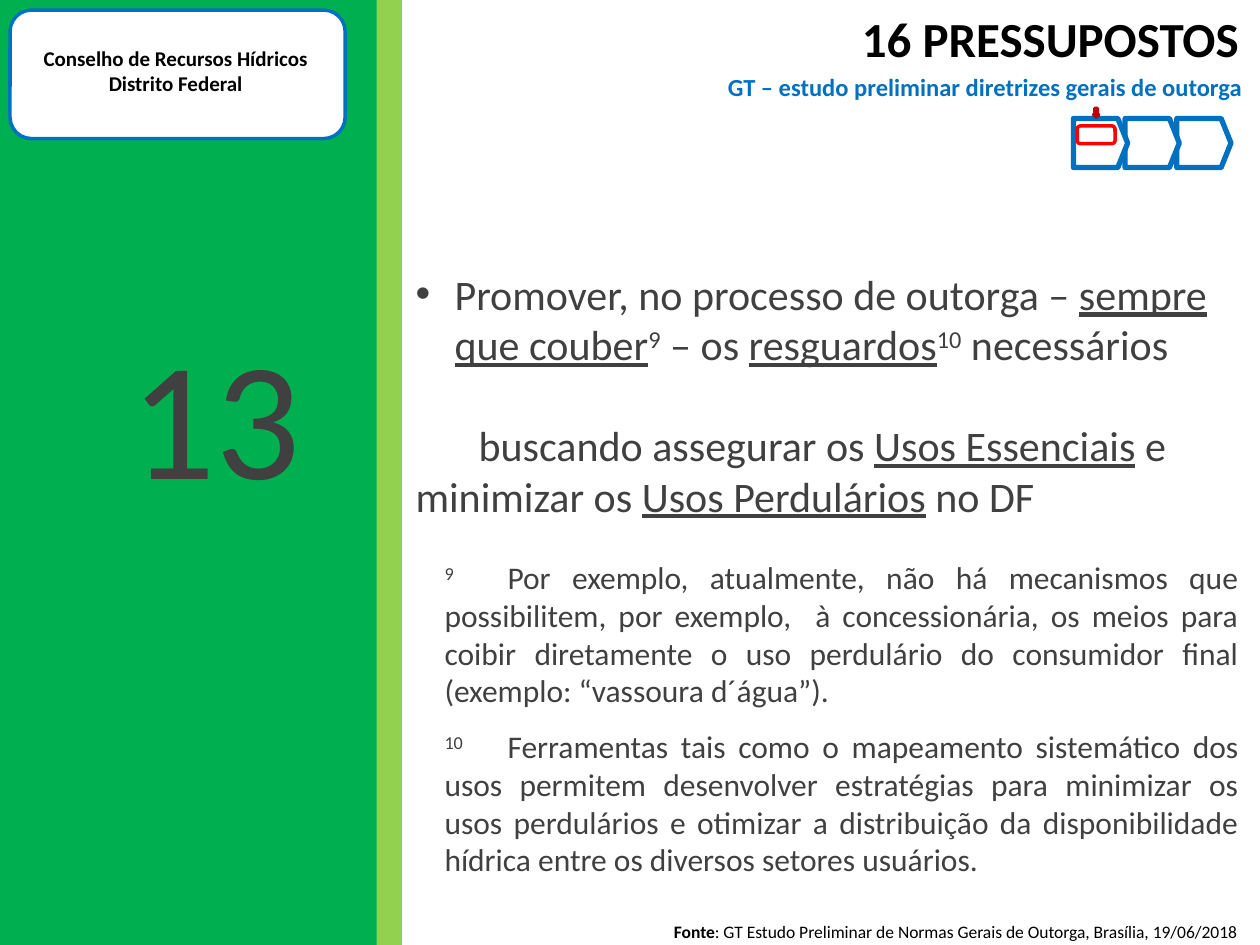
"""Build the slide on assumption 13 of the water-use permit guidelines."""
from pptx import Presentation
from pptx import util as u
from pptx.dml import color
from pptx.enum import shapes, text
from pptx.oxml import parse_xml
from pptx.oxml.ns import nsdecls

Inches = u.Inches
GREEN = color.RGBColor(0x00, 0xB0, 0x50)
LIME = color.RGBColor(0x92, 0xD0, 0x50)
BLUE = color.RGBColor(0x00, 0x70, 0xC0)
RED = color.RGBColor(0xFF, 0x00, 0x00)
DARK_RED = color.RGBColor(0xC0, 0x00, 0x00)
WHITE = color.RGBColor(0xFF, 0xFF, 0xFF)
BLACK = color.RGBColor(0x00, 0x00, 0x00)
GREY = color.RGBColor(0x40, 0x40, 0x40)
FORMATS = {
    "plain": {},
    "bold": {"bold": True},
    "underlined": {"underline": True},
    "raised": {},
}
KIND = shapes.MSO_SHAPE
ALIGN = text.PP_ALIGN

deck = Presentation()
deck.slide_width, deck.slide_height = Inches(10), Inches(7.5)
page = deck.slides.add_slide(deck.slide_layouts[6])


def add_block(kind, place, fill, line=None, width=2):
    block = page.shapes.add_shape(kind, *map(Inches, place))
    block.shadow.inherit = False
    if fill is None:
        block.fill.background()
    else:
        block.fill.solid()
        block.fill.fore_color.rgb = fill
    if line is None:
        block.line.fill.background()
    else:
        block.line.color.rgb = line
        block.line.width = u.Pt(width)
    return block


def add_text(place, paragraphs, size, ink, align=ALIGN.LEFT, wrap=False):
    box = page.shapes.add_textbox(*map(Inches, place))
    frame = box.text_frame
    frame.word_wrap = wrap
    frame.auto_size = text.MSO_AUTO_SIZE.SHAPE_TO_FIT_TEXT
    for index, spans in enumerate(paragraphs):
        para = frame.paragraphs[0] if index == 0 else frame.add_paragraph()
        para.alignment = align
        for words, style in spans:
            span = para.add_run()
            span.text = words
            span.font.color.rgb = ink
            settings = {"name": "Calibri", "size": u.Pt(size), **FORMATS[style]}
            for name, value in settings.items():
                setattr(span.font, name, value)
            if style == "raised":
                span.font._element.set("baseline", "30000")
    return frame


add_block(KIND.RECTANGLE, (2.8, 0, 0.39, 7.5), LIME)
add_block(KIND.RECTANGLE, (0, 0, 2.99, 7.5), GREEN)
add_block(KIND.ROUNDED_RECTANGLE, (0.08, 0.08, 2.66, 1.02), WHITE, BLUE)
add_text(
    (0.23, 0.31, 2.33, 0.5),
    [[("Conselho de Recursos Hídricos", "bold")], [("Distrito Federal", "bold")]],
    12, BLACK, ALIGN.CENTER,
)
add_text((0.94, 2.42, 1.57, 1.72), [[("13", "plain")]], 96, GREY)

statement = add_text(
    (3.2, 2.08, 6.8, 2.12),
    [
        [
            ("Promover, no processo de outorga – ", "plain"),
            ("sempre que couber", "underlined"),
            ("9", "raised"),
            (" – os ", "plain"),
            ("resguardos", "underlined"),
            ("10", "raised"),
            (" necessários", "plain"),
        ],
        [
            ("\tbuscando assegurar os ", "plain"),
            ("Usos Essenciais", "underlined"),
            (" e minimizar os ", "plain"),
            ("Usos Perdulários", "underlined"),
            (" no DF", "plain"),
        ],
    ],
    24, GREY, wrap=True,
)
bullet_item, conclusion = statement.paragraphs
bullet = bullet_item._p.get_or_add_pPr()
bullet.set("marL", str(Inches(0.31)))
bullet.set("indent", str(Inches(-0.31)))
bullet.append(parse_xml(f'<a:buFont {nsdecls("a")} typeface="Arial"/>'))
bullet.append(parse_xml(f'<a:buChar {nsdecls("a")} char="•"/>'))
conclusion.space_before = u.Pt(29)

for step in reversed(range(3)):
    stage = add_block(KIND.PENTAGON, (8.52 + 0.41 * step, 0.94, 0.43, 0.39), WHITE, BLUE, 3)
    stage.adjustments[0] = 0.2
add_block(KIND.DOWN_ARROW, (8.68, 0.86, 0.04, 0.07), RED, DARK_RED)
add_block(KIND.ROUNDED_RECTANGLE, (8.55, 1, 0.3, 0.14), None, RED)

add_text((6.7, 0.02, 3.23, 0.57), [[("16 PRESSUPOSTOS", "bold")]], 28, BLACK, ALIGN.RIGHT)
add_text(
    (5.65, 0.52, 4.31, 0.34),
    [[("GT – estudo preliminar diretrizes gerais de outorga", "bold")]],
    14, BLUE, ALIGN.RIGHT,
)

notes = [
    (4.38, "9", "Por exemplo, atualmente, não há mecanismos que possibilitem, por exemplo,  "
     "à concessionária, os meios para coibir diretamente o uso perdulário do "
     "consumidor final (exemplo: “vassoura d´água”)."),
    (5.72, "10", "Ferramentas tais como o mapeamento sistemático dos usos permitem "
     "desenvolver estratégias para minimizar os usos perdulários e otimizar a "
     "distribuição da disponibilidade hídrica entre os diversos setores usuários."),
]
for top, number, words in notes:
    add_text(
        (3.43, top, 6.5, 1.31),
        [[(number + "\t", "raised"), (words, "plain")]],
        18, GREY, ALIGN.JUSTIFY, wrap=True,
    )

add_text(
    (5.25, 7.26, 4.75, 0.27),
    [[
        ("Fonte", "bold"),
        (": GT Estudo Preliminar de Normas Gerais de Outorga, Brasília, 19/06/2018", "plain"),
    ]],
    10, BLACK,
)

deck.save("out.pptx")
